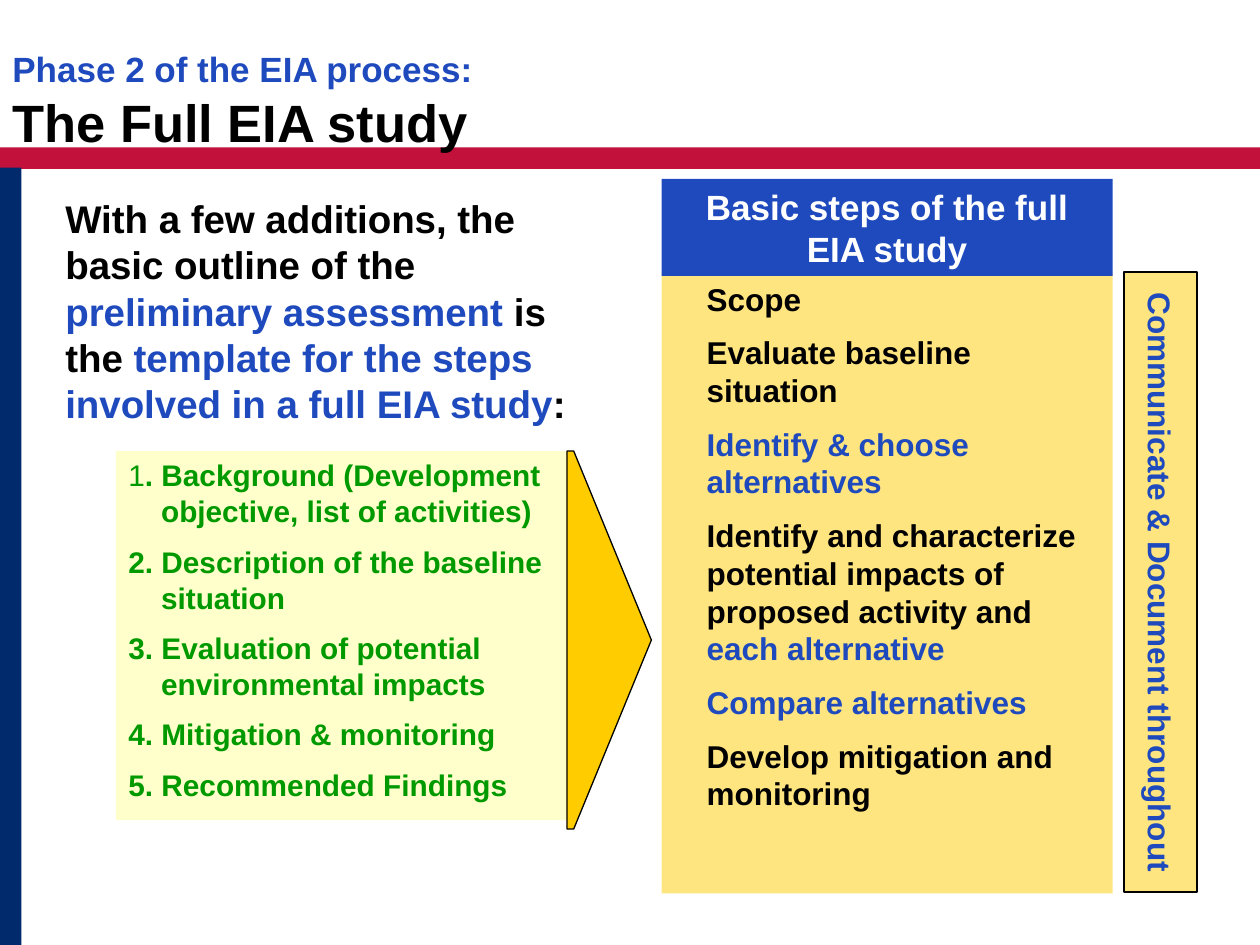
"""Build the slide on the full EIA study."""
from dataclasses import dataclass

import pptx
import pptx.dml.color
import pptx.enum.shapes
import pptx.enum.text
import pptx.oxml
import pptx.oxml.ns
import pptx.util
from pptx.util import Inches

RGBColor = pptx.dml.color.RGBColor
Shapes = pptx.enum.shapes.MSO_SHAPE
Align = pptx.enum.text.PP_ALIGN
Anchor = pptx.enum.text.MSO_ANCHOR

BLACK = RGBColor(0x00, 0x00, 0x00)
WHITE = RGBColor(0xFF, 0xFF, 0xFF)
BLUE = RGBColor(0x1E, 0x4A, 0xBD)
NAVY = RGBColor(0x00, 0x2A, 0x6C)
RED = RGBColor(0xC2, 0x11, 0x3A)
GOLD = RGBColor(0xFF, 0xCC, 0x00)
YELLOW = RGBColor(0xFF, 0xFF, 0x99)
GREEN = RGBColor(0x00, 0x99, 0x00)


@dataclass(frozen=True)
class Box:
    left: float
    top: float
    width: float
    height: float


@dataclass(frozen=True)
class Run:
    text: str
    size: float
    color: RGBColor = BLACK
    bold: bool = True


def add_block(slide, box: Box, fill: RGBColor, opacity: int = 100,
              outlined: bool = False, kind=Shapes.RECTANGLE):
    shape = slide.shapes.add_shape(kind, Inches(box.left), Inches(box.top),
                                   Inches(box.width), Inches(box.height))
    shape.shadow.inherit = False
    shape.fill.solid()
    shape.fill.fore_color.rgb = fill
    if opacity < 100:
        color = shape.fill._xPr.find(".//" + pptx.oxml.ns.qn("a:srgbClr"))
        color.append(pptx.oxml.parse_xml(
            f'<a:alpha {pptx.oxml.ns.nsdecls("a")} val="{opacity * 1000}"/>'))
    if outlined:
        shape.line.color.rgb = BLACK
        shape.line.width = pptx.util.Pt(0.75)
    else:
        shape.line.fill.background()
    return shape


def add_text_box(slide, box: Box):
    return slide.shapes.add_textbox(Inches(box.left), Inches(box.top),
                                    Inches(box.width), Inches(box.height))


def write(shape, paragraphs: list[list[Run]], align=Align.LEFT, anchor=Anchor.TOP,
          margin: float = 0, indent: float = 0, gap: float = 0,
          wrap: bool = True) -> None:
    frame = shape.text_frame
    frame.word_wrap = wrap
    frame.vertical_anchor = anchor
    for index, runs in enumerate(paragraphs):
        paragraph = frame.add_paragraph() if index else frame.paragraphs[0]
        paragraph.alignment = align
        paragraph.space_before = pptx.util.Pt(gap if index else 0)
        properties = paragraph._p.get_or_add_pPr()
        properties.set("marL", str(Inches(margin)))
        properties.set("indent", str(Inches(indent)))
        for item in runs:
            run = paragraph.add_run()
            run.text = item.text
            run.font.name = "Arial"
            run.font.size = pptx.util.Pt(item.size)
            run.font.bold = item.bold
            run.font.color.rgb = item.color


def add_frame(slide) -> None:
    add_block(slide, Box(0, 1.17, 10, 0.17), RED)
    add_block(slide, Box(0, 1.33, 0.17, 6.17), NAVY)
    write(add_text_box(slide, Box(0, 0.33, 8.5, 0.67)),
          [[Run("Phase 2 of the EIA process:", 20, BLUE)],
           [Run("The Full EIA study", 30)]])


def add_outline(slide) -> None:
    write(add_text_box(slide, Box(0.42, 1.5, 4.25, 2.08)),
          [[Run("With a few additions, the basic outline of the ", 22),
            Run("preliminary assessment", 22, BLUE),
            Run(" is the ", 22),
            Run("template for the steps involved in a full EIA study", 22, BLUE),
            Run(":", 22)]])
    sections = [
        [Run("1", 17, GREEN, False),
         Run(". Background (Development objective, list of activities)", 17, GREEN)],
        [Run("2. Description of the baseline situation", 17, GREEN)],
        [Run("3. Evaluation of potential environmental impacts", 17, GREEN)],
        [Run("4. Mitigation & monitoring", 17, GREEN)],
        [Run("5. Recommended Findings", 17, GREEN)],
    ]
    panel = add_block(slide, Box(0.92, 3.58, 3.58, 2.93), YELLOW, 50)
    write(panel, sections, margin=0.26, indent=-0.26, gap=8.5)
    arrow = add_block(slide, Box(4.5, 3.58, 0.67, 3), GOLD, outlined=True,
                      kind=Shapes.PENTAGON)
    arrow.adjustments[0] = 0.92


def add_steps(slide) -> None:
    steps = [
        [Run("Scope", 18)],
        [Run("Evaluate baseline situation", 18)],
        [Run("Identify & choose alternatives", 18, BLUE)],
        [Run("Identify and characterize potential impacts of proposed activity and ", 18),
         Run("each alternative", 18, BLUE)],
        [Run("Compare alternatives", 18, BLUE)],
        [Run("Develop mitigation and monitoring", 18)],
    ]
    panel = add_block(slide, Box(5.25, 2.17, 3.58, 4.92), GOLD, 50)
    write(panel, steps, margin=0.26, gap=9)
    heading = add_block(slide, Box(5.25, 1.42, 3.58, 0.77), BLUE)
    write(heading, [[Run("Basic steps of the full EIA study", 20, WHITE)]], Align.CENTER)
    banner = add_block(slide, Box(6.75, 4.33, 4.92, 0.58), GOLD, 50, outlined=True)
    banner.rotation = 90
    write(banner, [[Run("Communicate & Document throughout", 18, BLUE)]],
          Align.CENTER, Anchor.MIDDLE, wrap=False)


def main() -> None:
    presentation = pptx.Presentation()
    presentation.slide_width = Inches(10)
    presentation.slide_height = Inches(7.5)
    slide = presentation.slides.add_slide(presentation.slide_layouts[6])
    add_frame(slide)
    add_outline(slide)
    add_steps(slide)
    presentation.save("out.pptx")


if __name__ == "__main__":
    main()
